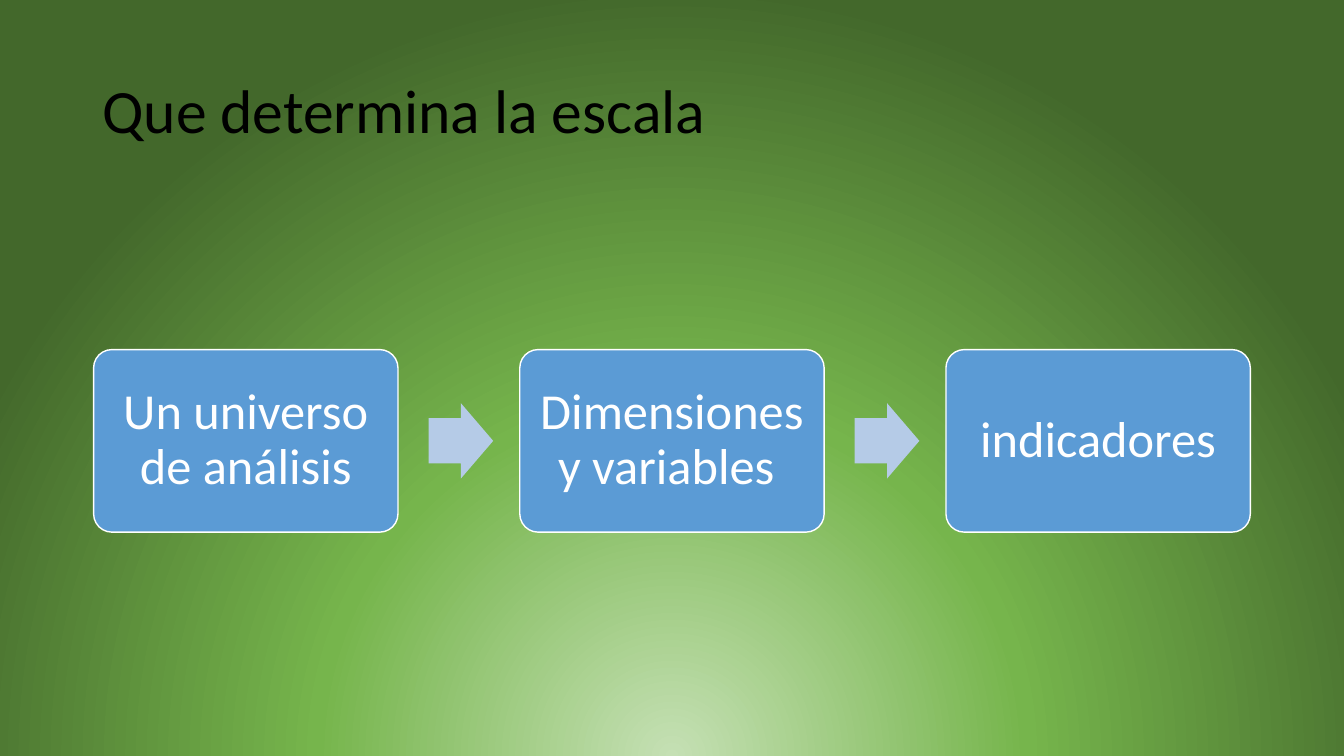
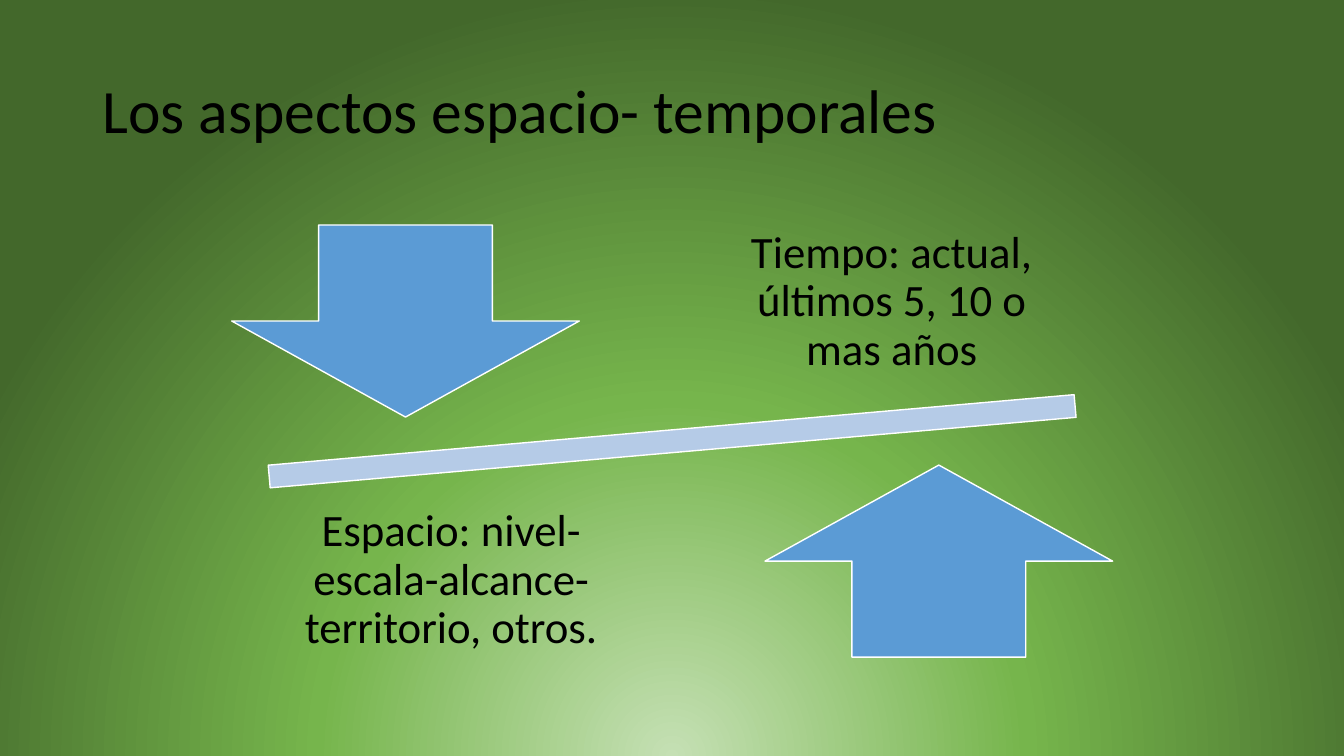
import pptx
import pptx.util
import pptx.oxml
import pptx.oxml.ns
import pptx.dml.color
import pptx.enum.shapes
import pptx.enum.text

Cm = pptx.util.Cm
Pt = pptx.util.Pt
SHAPE = pptx.enum.shapes.MSO_SHAPE
ALIGN = pptx.enum.text.PP_ALIGN

COLORS = {
    "glow": "C5E0B4",
    "green": "76B54C",
    "forest": "43682B",
    "blue": "5B9BD5",
    "pale_blue": "B5CBE7",
    "white": "FFFFFF",
    "black": "000000",
}
FONT = "Calibri"
TITLES = ["Que determina la escala", "Los aspectos espacio- temporales"]

# Radial gradient shared by all slides, centred below the bottom edge
stops = "".join(
    f'<a:gs pos="{position * 1000}"><a:srgbClr val="{COLORS[name]}"/></a:gs>'
    for position, name in [(0, "glow"), (46, "green"), (100, "forest")]
)
BACKGROUND = (
    f'<p:bg {pptx.oxml.ns.nsdecls("p", "a")}><p:bgPr>'
    f'<a:gradFill rotWithShape="1"><a:gsLst>{stops}</a:gsLst><a:path path="circle">'
    '<a:fillToRect l="50000" t="130000" r="50000" b="-30000"/></a:path></a:gradFill>'
    "<a:effectLst/></p:bgPr></p:bg>"
)


def write_text(box, text, size, color, align=ALIGN.CENTER, inset=None):
    frame = box.text_frame
    frame.word_wrap = True
    frame.vertical_anchor = pptx.enum.text.MSO_ANCHOR.MIDDLE
    if inset is not None:
        frame.margin_left = frame.margin_right = Cm(inset)
        frame.margin_top = frame.margin_bottom = Cm(inset)
    para = frame.paragraphs[0]
    para.text = text
    para.alignment = align
    para.line_spacing = 0.9
    para.font.name = FONT
    para.font.size = Pt(size)
    para.font.color.rgb = pptx.dml.color.RGBColor.from_string(COLORS[color])


def add_block(page, kind, left, top, width, height, fill, outlined=True):
    block = page.shapes.add_shape(kind, Cm(left), Cm(top), Cm(width), Cm(height))
    block.shadow.inherit = False
    block.fill.solid()
    block.fill.fore_color.rgb = pptx.dml.color.RGBColor.from_string(COLORS[fill])
    if outlined:
        block.line.color.rgb = pptx.dml.color.RGBColor.from_string(COLORS["white"])
        block.line.width = Pt(1)
    else:
        block.line.fill.background()
    return block


deck = pptx.Presentation()
deck.slide_width = Cm(33.87)
deck.slide_height = Cm(19.05)

# Pages with background and title
pages = []
for title in TITLES:
    page = deck.slides.add_slide(deck.slide_layouts[6])
    page.element.cSld.insert(0, pptx.oxml.parse_xml(BACKGROUND))
    title_box = page.shapes.add_textbox(Cm(2.33), Cm(1.01), Cm(29.21), Cm(3.68))
    write_text(title_box, title, 44, "black", ALIGN.LEFT)
    pages.append(page)
process_page, balance_page = pages

# Process: three steps joined by arrows
STEPS = ["Un universo de análisis", "Dimensiones y variables ", "indicadores"]
STEP_LEFT, STEP_PITCH = 2.36, 10.74
for index, text in enumerate(STEPS):
    left = STEP_LEFT + index * STEP_PITCH
    step = add_block(process_page, SHAPE.ROUNDED_RECTANGLE, left, 8.81, 7.67, 4.6, "blue")
    step.adjustments[0] = 0.1
    write_text(step, text, 36, "white", inset=0.36)
    if index < len(STEPS) - 1:
        arrow = add_block(process_page, SHAPE.RIGHT_ARROW, left + 8.44, 10.16,
                          1.63, 1.9, "pale_blue", outlined=False)
        arrow.adjustments[0] = 0.6

# Balance: tilted bar between two opposed arrows
bar = add_block(balance_page, SHAPE.MATH_MINUS, 3.07, 9.9, 27.74, 2.44, "pale_blue")
bar.rotation = 355

SIDES = [
    (SHAPE.DOWN_ARROW, 5.84, 5.67, "Tiempo: actual, últimos 5, 10 o mas años", 17.8, 5.08),
    (SHAPE.UP_ARROW, 19.28, 11.72, "Espacio: nivel-escala-alcance-territorio, otros.", 6.7, 12.09),
]
for kind, arrow_left, arrow_top, text, text_left, text_top in SIDES:
    add_block(balance_page, kind, arrow_left, arrow_top, 8.76, 4.84, "blue")
    label = balance_page.shapes.add_textbox(Cm(text_left), Cm(text_top), Cm(9.35), Cm(5.08))
    write_text(label, text, 32, "black", inset=0.63)

deck.save("out.pptx")
